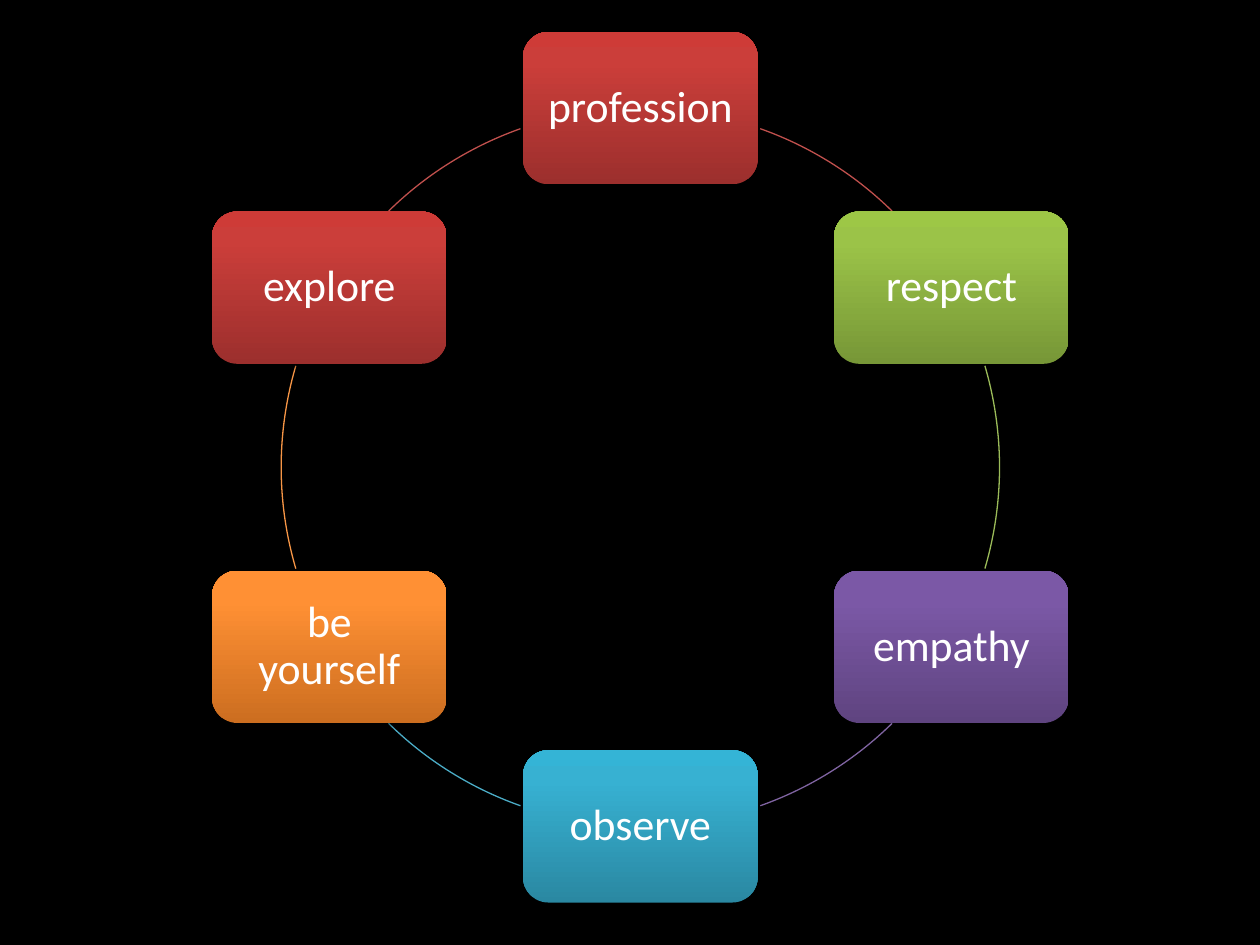
"""Build a slide with six values arranged in a cycle."""
from math import cos, radians, sin

from lxml.etree import SubElement
from pptx import Presentation
from pptx.dml.color import RGBColor
from pptx.enum.shapes import MSO_SHAPE as SHAPE
from pptx.enum.text import MSO_ANCHOR as ANCHOR, PP_ALIGN as ALIGN
from pptx.oxml.ns import qn
from pptx.util import Cm, Pt

BLACK = RGBColor(0x00, 0x00, 0x00)
WHITE = RGBColor(0xFF, 0xFF, 0xFF)
RED = RGBColor(0xC0, 0x50, 0x4D)
GREEN = RGBColor(0x9B, 0xBB, 0x59)
PURPLE = RGBColor(0x80, 0x64, 0xA2)
BLUE = RGBColor(0x4B, 0xAC, 0xC6)
ORANGE = RGBColor(0xF7, 0x96, 0x46)

SHADES = {
    RED: ("9C2F2D", "CB3E3A", "CE3B37"),
    GREEN: ("779737", "9BC348", "9DC746"),
    PURPLE: ("5F4480", "7B58A6", "7C57A8"),
    BLUE: ("2A88A2", "37B1D2", "34B4D6"),
    ORANGE: ("CC6E20", "FF9034", "FF9136"),
}
STOPS = (0, 80, 100)

STEPS = [
    ("profession", RED, (-70.5, -45.5)),
    ("respect", GREEN, (-16.4, 16.4)),
    ("empathy", PURPLE, (45.5, 70.5)),
    ("observe", BLUE, (109.5, 134.5)),
    ("be yourself", ORANGE, (163.6, 196.4)),
    ("explore", RED, (225.5, 250.5)),
]

CX, CY, RADIUS = 12.91, 9.42, 7.24
BOX_W, BOX_H, INSET = 4.73, 3.07, 0.25
ARC_UNITS_PER_DEGREE = 0.6


def shade(sp, colors):
    sp.fill.gradient()
    sp.fill.gradient_angle = 90
    stops = sp._element.spPr.find(qn("a:gradFill")).find(qn("a:gsLst"))
    for gs in list(stops):
        stops.remove(gs)
    for pos, color in zip(STOPS, colors):
        gs = SubElement(stops, qn("a:gs"), pos=str(pos * 1000))
        SubElement(gs, qn("a:srgbClr"), val=color)


def drop_shadow(sp):
    sp.shadow.inherit = False
    effects = sp._element.spPr.find(qn("a:effectLst"))
    shadow = SubElement(effects, qn("a:outerShdw"), blurRad=str(Pt(3.1)),
                        dist=str(Pt(1.8)), dir="5400000", rotWithShape="0")
    color = SubElement(shadow, qn("a:srgbClr"), val=str(BLACK))
    SubElement(color, qn("a:alpha"), val="35000")


def add_box(s, text, color, angle):
    x = CX + RADIUS * cos(radians(angle)) - BOX_W / 2
    y = CY + RADIUS * sin(radians(angle)) - BOX_H / 2
    sp = s.shapes.add_shape(SHAPE.ROUNDED_RECTANGLE, Cm(x), Cm(y), Cm(BOX_W), Cm(BOX_H))
    shade(sp, SHADES[color])
    sp.line.fill.background()
    drop_shadow(sp)
    tf = sp.text_frame
    tf.word_wrap = True
    tf.vertical_anchor = ANCHOR.MIDDLE
    tf.margin_left = tf.margin_right = tf.margin_top = tf.margin_bottom = Cm(INSET)
    p = tf.paragraphs[0]
    p.text = text
    p.alignment = ALIGN.CENTER
    p.line_spacing = 0.9
    p.font.name = "Calibri"
    p.font.size = Pt(25)
    p.font.color.rgb = WHITE


def add_arc(s, color, ends):
    sp = s.shapes.add_shape(SHAPE.ARC, Cm(CX - RADIUS), Cm(CY - RADIUS),
                            Cm(2 * RADIUS), Cm(2 * RADIUS))
    for i, angle in enumerate(ends):
        sp.adjustments[i] = angle % 360 * ARC_UNITS_PER_DEGREE
    sp.fill.background()
    sp.line.color.rgb = color
    sp.line.width = Pt(0.75)
    sp.shadow.inherit = False


def main():
    prs = Presentation()
    prs.slide_width, prs.slide_height = Cm(25.4), Cm(19.05)
    s = prs.slides.add_slide(prs.slide_layouts[6])
    s.background.fill.solid()
    s.background.fill.fore_color.rgb = BLACK
    for i, (text, color, ends) in enumerate(STEPS):
        add_box(s, text, color, -90 + i * 360 / len(STEPS))
        add_arc(s, color, ends)
    prs.save("out.pptx")


if __name__ == "__main__":
    main()
